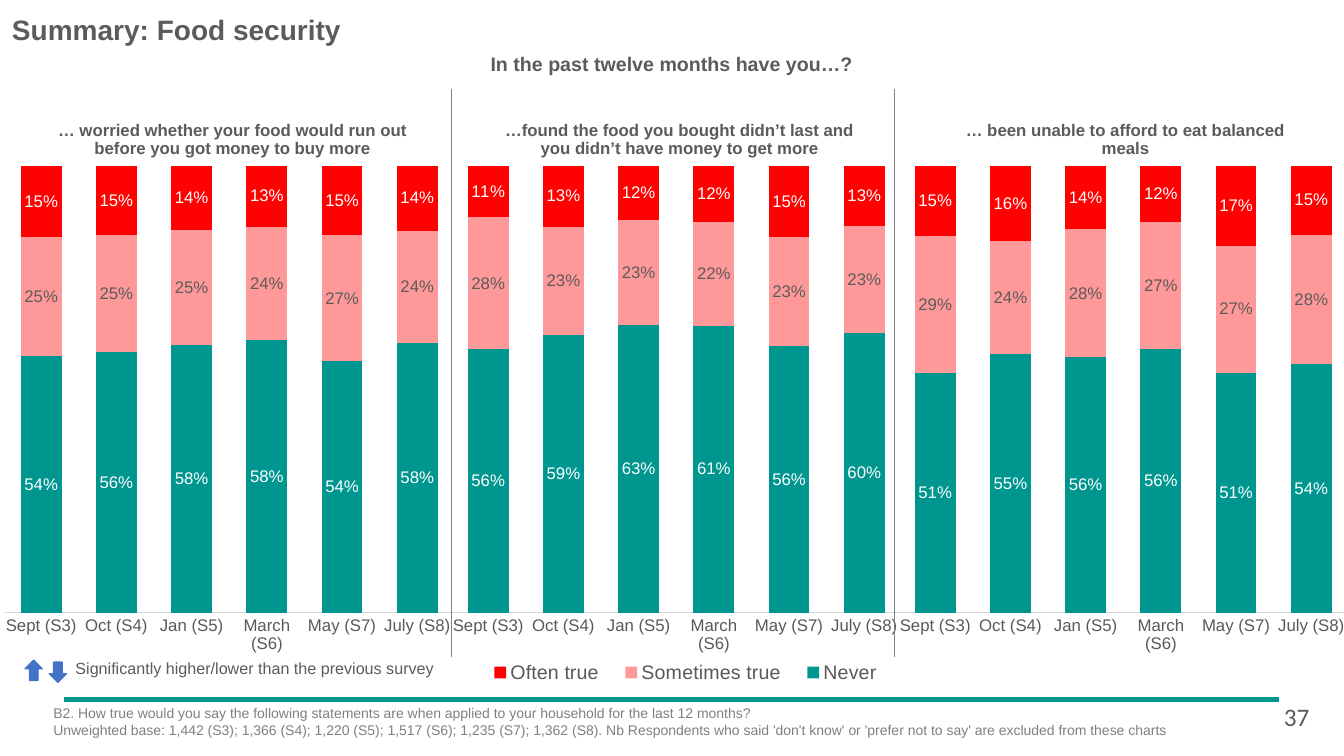
from lxml import etree
from pptx import Presentation
from pptx.chart.data import CategoryChartData
from pptx.dml.color import RGBColor
from pptx.enum import chart as chart_enum, shapes, text
from pptx.oxml import ns
from pptx.util import Pt

TEAL = RGBColor(0x00, 0x96, 0x90)
PINK = RGBColor(0xFF, 0x99, 0x99)
RED = RGBColor(0xFF, 0x01, 0x01)
BLUE = RGBColor(0x44, 0x72, 0xC4)
WHITE = RGBColor(0xFF, 0xFF, 0xFF)
DARK = RGBColor(0x5C, 0x5B, 0x5A)
AXIS_TEXT = RGBColor(0x59, 0x59, 0x59)
GREY = RGBColor(0x80, 0x80, 0x80)
PALE = RGBColor(0xD9, 0xD9, 0xD9)

SURVEYS = ["Sept (S3)", "Oct (S4)", "Jan (S5)", "March (S6)", "May (S7)", "July (S8)"]
ANSWERS = [("Never", TEAL, WHITE), ("Sometimes true", PINK, DARK), ("Often true", RED, WHITE)]
# Question, left edge of its heading as a share of the chart, one row per answer
QUESTIONS = [
    ("… worried whether your food would run out before you got money to buy more", 0.12, [
        (0.54, 0.56, 0.58, 0.58, 0.54, 0.58),
        (0.25, 0.25, 0.25, 0.24, 0.27, 0.24),
        (0.15, 0.15, 0.14, 0.13, 0.15, 0.14)]),
    ("…found the food you bought didn’t last and you didn’t have money to get more", 0.12, [
        (0.56, 0.59, 0.63, 0.61, 0.56, 0.60),
        (0.28, 0.23, 0.23, 0.22, 0.23, 0.23),
        (0.11, 0.13, 0.12, 0.12, 0.15, 0.13)]),
    ("… been unable to afford to eat balanced meals", 0.15, [
        (0.51, 0.55, 0.56, 0.56, 0.51, 0.54),
        (0.29, 0.24, 0.28, 0.27, 0.27, 0.28),
        (0.15, 0.16, 0.14, 0.12, 0.17, 0.15)]),
]
LEGEND_QUESTION = 1
FOOTNOTES = [
    "B2. How true would you say the following statements are when applied to your household "
    "for the last 12 months?",
    "Unweighted base: 1,442 (S3); 1,366 (S4); 1,220 (S5); 1,517 (S6); 1,235 (S7); 1,362 (S8). "
    "Nb Respondents who said 'don't know' or 'prefer not to say' are excluded from these charts",
]
CHART_TOP, CHART_WIDTH, CHART_HEIGHT, CHART_STEP = 66.24, 327.6, 427, 319.3
DIVIDERS = [322.6, 638.6]
ARROWS = [(18, 471.6, 180), (35.3, 473, 0)]


def set_font(font, size, color, bold=False, name="Arial"):
    font.name, font.size, font.bold = name, Pt(size), bold
    font.color.rgb = color


def add_text(slide, lines, left, top, width, height, *, size, color=DARK, bold=False,
             name="Arial", align=text.PP_ALIGN.LEFT, anchor=text.MSO_ANCHOR.TOP,
             inset=True, wrap=True, spacing=None):
    frame = slide.shapes.add_textbox(Pt(left), Pt(top), Pt(width), Pt(height)).text_frame
    frame.word_wrap, frame.vertical_anchor = wrap, anchor
    if not inset:
        frame.margin_left = frame.margin_right = frame.margin_top = frame.margin_bottom = 0
    for index, line in enumerate(lines):
        paragraph = frame.paragraphs[0] if index == 0 else frame.add_paragraph()
        paragraph.alignment, paragraph.line_spacing = align, spacing
        run = paragraph.add_run()
        run.text = line
        set_font(run.font, size, color, bold, name)


def add_line(slide, x1, y1, x2, y2, color, weight):
    line = slide.shapes.add_connector(shapes.MSO_CONNECTOR.STRAIGHT, Pt(x1), Pt(y1), Pt(x2), Pt(y2))
    line.line.color.rgb, line.line.width = color, Pt(weight)
    etree.SubElement(line._element.spPr, ns.qn("a:effectLst"))


def place(element, index, **values):
    """Give a chart part a manual layout, as shares of the chart, at a child index."""
    for old in element.findall(ns.qn("c:layout")):
        element.remove(old)
    layout = etree.Element(ns.qn("c:layout"))
    manual = etree.SubElement(layout, ns.qn("c:manualLayout"))
    if "layoutTarget" in values:
        etree.SubElement(manual, ns.qn("c:layoutTarget")).set("val", values.pop("layoutTarget"))
    for mode in ("xMode", "yMode"):
        etree.SubElement(manual, ns.qn("c:" + mode)).set("val", "edge")
    for key, value in values.items():
        etree.SubElement(manual, ns.qn("c:" + key)).set("val", str(value))
    element.insert(index, layout)


def add_question_chart(slide, left, question, heading_left, rows, with_legend):
    data = CategoryChartData(number_format="0%")
    data.categories = SURVEYS
    for (answer, _, _), row in zip(ANSWERS, rows):
        data.add_series(answer, row)
    chart = slide.shapes.add_chart(
        chart_enum.XL_CHART_TYPE.COLUMN_STACKED_100, Pt(left), Pt(CHART_TOP),
        Pt(CHART_WIDTH), Pt(CHART_HEIGHT), data).chart
    set_font(chart.font, 10, AXIS_TEXT)

    heading = chart.chart_title
    run = heading.text_frame.paragraphs[0].add_run()
    run.text = question
    set_font(run.font, 12, DARK, True)
    place(heading._element, 1, x=heading_left, y=0.04)

    plot = chart.plots[0]
    plot.gap_width, plot.overlap, plot.vary_by_categories = 85, 100, False
    for series, (_, fill, label_color) in zip(plot.series, ANSWERS):
        series.format.fill.solid()
        series.format.fill.fore_color.rgb = fill
        labels = series.data_labels
        labels.show_value = True
        labels.position = chart_enum.XL_LABEL_POSITION.CENTER
        labels.number_format, labels.number_format_is_linked = "0%", False
        set_font(labels.font, 12, label_color)
    place(chart._chartSpace.chart.plotArea, 0, layoutTarget="inner",
          x=0.008, y=0.122, w=0.984, h=0.748)

    axis = chart.category_axis
    axis.major_tick_mark = chart_enum.XL_TICK_MARK.NONE
    axis.format.line.color.rgb, axis.format.line.width = PALE, Pt(0.75)
    set_font(axis.tick_labels.font, 12, AXIS_TEXT)
    chart.value_axis.visible = False
    chart.value_axis.has_major_gridlines = False
    chart.value_axis.minimum_scale, chart.value_axis.maximum_scale = 0, 1

    chart.has_legend = with_legend
    if with_legend:
        chart.legend.position = chart_enum.XL_LEGEND_POSITION.LEFT
        chart.legend.include_in_layout = False
        set_font(chart.legend.font, 14, AXIS_TEXT)
        place(chart.legend._element, 1, x=0.06, y=0.94, w=0.92, h=0.06)


def add_arrow(slide, left, top, rotation):
    arrow = slide.shapes.add_shape(shapes.MSO_SHAPE.DOWN_ARROW, Pt(left), Pt(top), Pt(12.2), Pt(14.4))
    arrow.rotation = rotation
    arrow.shadow.inherit = False
    arrow.fill.solid()
    arrow.fill.fore_color.rgb = arrow.line.color.rgb = BLUE
    arrow.line.width = Pt(1)


def main():
    presentation = Presentation()
    presentation.slide_width, presentation.slide_height = Pt(960), Pt(540)
    slide = presentation.slides.add_slide(presentation.slide_layouts[6])

    add_line(slide, 46, 499.7, 913.7, 499.7, TEAL, 3)
    add_text(slide, ["Summary: Food security"], 8.6, 8.6, 828, 24.5, size=20, bold=True,
             anchor=text.MSO_ANCHOR.MIDDLE, inset=False)
    add_text(slide, ["In the past twelve months have you…?"], 236.9, 38.9, 486, 15.1, size=14,
             bold=True, align=text.PP_ALIGN.CENTER, inset=False, spacing=0.9)
    for index, (question, heading_left, rows) in enumerate(QUESTIONS):
        add_question_chart(slide, index * CHART_STEP, question, heading_left, rows,
                           index == LEGEND_QUESTION)
    for x in DIVIDERS:
        add_line(slide, x, 63.4, x, 469.4, GREY, 0.5)
    for arrow in ARROWS:
        add_arrow(slide, *arrow)
    add_text(slide, ["Significantly higher/lower than the previous survey"], 46.8, 466.6, 272.9, 20.9,
             size=11.5, wrap=False)
    add_text(slide, FOOTNOTES, 31, 499.7, 862.6, 40.3, size=10, color=GREY)
    add_text(slide, ["37"], 910, 497.5, 38.2, 28.8, size=18, name="Calibri")
    presentation.save("out.pptx")


if __name__ == "__main__":
    main()
